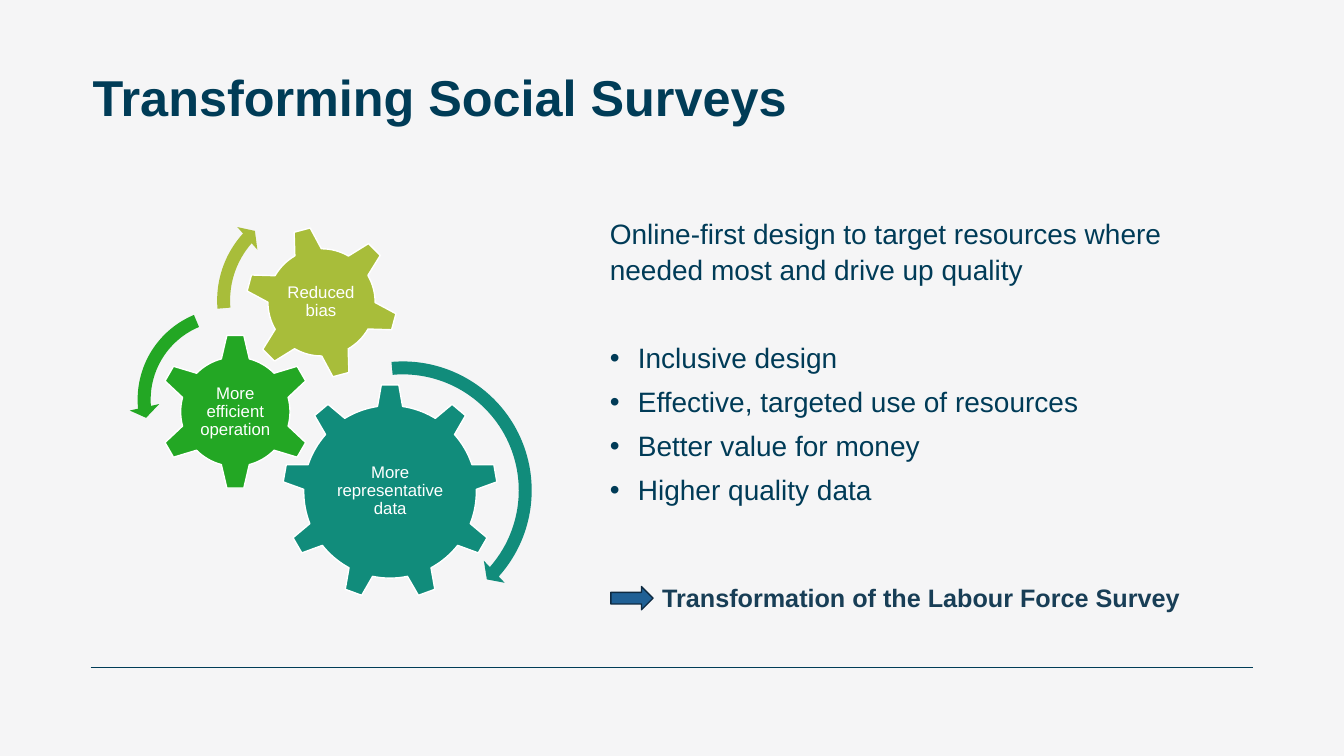
from lxml.etree import SubElement
from pptx import Presentation
from pptx.dml.color import RGBColor
from pptx.enum.shapes import MSO_CONNECTOR, MSO_SHAPE
from pptx.enum.text import MSO_ANCHOR, MSO_AUTO_SIZE, PP_ALIGN
from pptx.oxml.ns import qn
from pptx.util import Pt

BACKGROUND = RGBColor(0xF5, 0xF5, 0xF6)
NAVY = RGBColor(0x00, 0x3C, 0x57)
BODY_NAVY = RGBColor(0x00, 0x3B, 0x57)
OUTCOME_NAVY = RGBColor(0x18, 0x3E, 0x56)
ARROW_BLUE = RGBColor(0x20, 0x60, 0x95)
ARROW_EDGE = RGBColor(0x0E, 0x2A, 0x41)
TEAL = RGBColor(0x11, 0x8C, 0x7B)
GREEN = RGBColor(0x23, 0xA7, 0x24)
LIME = RGBColor(0xA8, 0xBD, 0x3A)
WHITE = RGBColor(0xFF, 0xFF, 0xFF)

FONT = "Arial"
TITLE = "Transforming Social Surveys"
INTRO = "Online-first design to target resources where needed most and drive up quality"
BENEFITS = [
    "Inclusive design",
    "Effective, targeted use of resources",
    "Better value for money",
    "Higher quality data",
]
OUTCOME = "Transformation of the Labour Force Survey"

# label, shape, colour, (left, top, size), rotation, label box
GEARS = [
    ("More representative data", MSO_SHAPE.GEAR_9, TEAL,
     (201.6, 274.3, 154.1), 0, (232.6, 311, 92.2, 79.2)),
    ("More efficient operation", MSO_SHAPE.GEAR_6, GREEN,
     (112.3, 238.3, 111.6), 0, (140.4, 266.4, 55.4, 55.4)),
    ("Reduced bias", MSO_SHAPE.GEAR_6, LIME,
     (175, 161.3, 109.4), 345, (198.7, 185, 61.2, 61.2)),
]
# shape, colour, (left, top, size), adjustments
TURNS = [
    (MSO_SHAPE.CIRCULAR_ARROW, TEAL, (189.4, 252, 196.6),
     (0.047, 2.99, 24.987, 158.994, 0.055)),
    (MSO_SHAPE.LEFT_CIRCULAR_ARROW, GREEN, (92.2, 213.8, 143.3),
     (0.065, 4.3, 104.891, 148.378, 0.075)),
    (MSO_SHAPE.CIRCULAR_ARROW, LIME, (149, 137.5, 154.1),
     (0.06, 3.941, 133.138, 105.082, 0.07)),
]
BULLET_INDENT = 20
BENEFITS_GAP = 31.4


def place(shape, left, top, width, height):
    shape.left, shape.top = Pt(left), Pt(top)
    shape.width, shape.height = Pt(width), Pt(height)


def set_frame(shape, anchor, margins):
    """Wrap the text, fix its anchor and margins, and return the text frame."""
    frame = shape.text_frame
    frame.word_wrap = True
    frame.auto_size = MSO_AUTO_SIZE.NONE
    frame.vertical_anchor = anchor
    frame.margin_left, frame.margin_top, frame.margin_right, frame.margin_bottom = map(Pt, margins)
    return frame


def write(paragraph, text, size, color, bold=False, align=PP_ALIGN.LEFT,
          line_spacing=1.0, before=0, after=0):
    paragraph.alignment = align
    paragraph.line_spacing = line_spacing
    paragraph.space_before, paragraph.space_after = Pt(before), Pt(after)
    run = paragraph.add_run()
    run.text = text
    font = run.font
    font.name, font.size, font.bold = FONT, Pt(size), bold
    font.color.rgb = color


def set_bullet(paragraph, character, indent):
    properties = paragraph._p.get_or_add_pPr()
    properties.set("marL", str(Pt(indent)))
    properties.set("indent", str(-Pt(indent)))
    if character:
        SubElement(properties, qn("a:buFont")).set("typeface", FONT)
        SubElement(properties, qn("a:buChar")).set("char", character)
    else:
        SubElement(properties, qn("a:buNone"))


def add_filled(slide, kind, box, fill, line=None):
    shape = slide.shapes.add_shape(kind, *map(Pt, box))
    shape.shadow.inherit = False
    shape.fill.solid()
    shape.fill.fore_color.rgb = fill
    if line is None:
        shape.line.fill.background()
    else:
        shape.line.color.rgb = line
        shape.line.width = Pt(1)
    return shape


def add_rule(slide):
    rule = slide.shapes.add_connector(
        MSO_CONNECTOR.STRAIGHT, Pt(64.8), Pt(476.6), Pt(895), Pt(476.6))
    rule.line.color.rgb = NAVY
    rule.line.width = Pt(1)
    SubElement(rule._element.spPr, qn("a:effectLst"))


def add_gears(slide):
    for label, kind, color, (left, top, size), rotation, label_box in GEARS:
        gear = add_filled(slide, kind, (left, top, size, size), color, WHITE)
        gear.rotation = rotation
        text_box = slide.shapes.add_textbox(*map(Pt, label_box))
        frame = set_frame(text_box, MSO_ANCHOR.MIDDLE, (1.5,) * 4)
        write(frame.paragraphs[0], label, 12, WHITE,
              align=PP_ALIGN.CENTER, line_spacing=0.9)
    for kind, color, (left, top, size), adjustments in TURNS:
        turn = add_filled(slide, kind, (left, top, size, size), color)
        for index, value in enumerate(adjustments):
            turn.adjustments[index] = value


def add_body(body):
    place(body, 435.6, 151.9, 438.5, 209.5)
    frame = set_frame(body, MSO_ANCHOR.TOP, (0,) * 4)
    intro = frame.paragraphs[0]
    set_bullet(intro, None, 0)
    write(intro, INTRO, 20, BODY_NAVY, line_spacing=1.1, after=5)
    for index, benefit in enumerate(BENEFITS):
        paragraph = frame.add_paragraph()
        set_bullet(paragraph, "•", BULLET_INDENT)
        write(paragraph, benefit, 20, BODY_NAVY, line_spacing=1.1,
              before=0 if index else BENEFITS_GAP, after=5)


def add_outcome(slide):
    text_box = slide.shapes.add_textbox(Pt(473), Pt(412.6), Pt(421.9), Pt(28.8))
    frame = set_frame(text_box, MSO_ANCHOR.BOTTOM, (0, 3.6, 7.2, 3.6))
    write(frame.paragraphs[0], OUTCOME, 18, OUTCOME_NAVY, bold=True)
    add_filled(slide, MSO_SHAPE.RIGHT_ARROW, (436.3, 419, 30.2, 16.6),
               ARROW_BLUE, ARROW_EDGE)


def main():
    presentation = Presentation()
    presentation.slide_width, presentation.slide_height = Pt(960), Pt(540)
    slide = presentation.slides.add_slide(presentation.slide_layouts[1])
    slide.background.fill.solid()
    slide.background.fill.fore_color.rgb = BACKGROUND

    title = slide.shapes.title
    place(title, 66.2, 50.4, 828, 41.8)
    frame = set_frame(title, MSO_ANCHOR.TOP, (0,) * 4)
    write(frame.paragraphs[0], TITLE, 36, NAVY, bold=True, line_spacing=0.95, after=10)

    add_rule(slide)
    add_gears(slide)
    add_body(slide.placeholders[1])
    add_outcome(slide)
    presentation.save("out.pptx")


if __name__ == "__main__":
    main()
